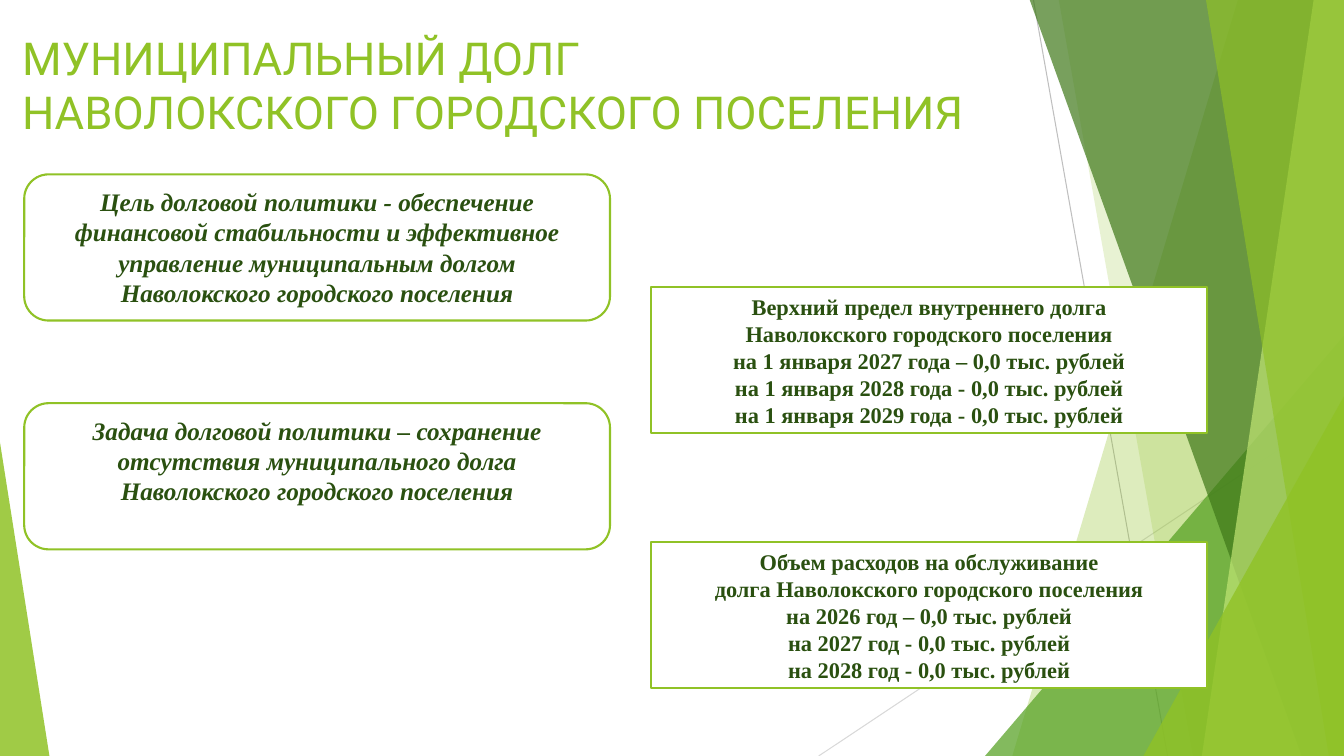
import pptx
import pptx.dml.color
import pptx.enum.shapes
import pptx.enum.text
import pptx.oxml.ns
import pptx.util
from lxml import etree
from pptx.util import Inches

RGBColor = pptx.dml.color.RGBColor
Shape = pptx.enum.shapes.MSO_SHAPE
Anchor = pptx.enum.text.MSO_ANCHOR
Align = pptx.enum.text.PP_ALIGN

LIME = RGBColor(0x90, 0xC2, 0x26)
PALE_LIME = RGBColor(0xC0, 0xE4, 0x74)
GREEN = RGBColor(0x54, 0xA0, 0x21)
FOREST = RGBColor(0x3F, 0x78, 0x19)
TEXT_GREEN = RGBColor(0x2A, 0x50, 0x10)
WHITE = RGBColor(0xFF, 0xFF, 0xFF)
GRAY = RGBColor(0xBF, 0xBF, 0xBF)
LIGHT_GRAY = RGBColor(0xD9, 0xD9, 0xD9)

WIDTH, HEIGHT = 13.33, 7.5
PANEL_TOP = -0.01

TITLE_FORMAT = {"name": "Roboto", "size": pptx.util.Pt(32.4)}
FIGURES_FORMAT = {"name": "Times New Roman", "size": pptx.util.Pt(16), "bold": True}
POLICY_FORMAT = {"name": "Times New Roman", "size": pptx.util.Pt(18),
                 "bold": True, "italic": True}

TITLE = "МУНИЦИПАЛЬНЫЙ ДОЛГ\vНАВОЛОКСКОГО ГОРОДСКОГО ПОСЕЛЕНИЯ"
GOAL = ["Цель долговой политики - обеспечение финансовой стабильности и эффективное "
        "управление муниципальным долгом Наволокского городского поселения"]
TASK = ["Задача долговой политики – сохранение отсутствия муниципального долга "
        "Наволокского городского поселения"]
DEBT_LIMIT = [
    "Верхний предел внутреннего долга",
    "Наволокского городского поселения",
    "на 1 января 2027 года – 0,0 тыс. рублей",
    "на 1 января 2028 года - 0,0 тыс. рублей",
    "на 1 января 2029 года - 0,0 тыс. рублей",
]
SERVICE_COSTS = [
    "Объем расходов на обслуживание",
    "долга Наволокского городского поселения",
    "на 2026 год – 0,0 тыс. рублей",
    "на 2027 год - 0,0 тыс. рублей",
    "на 2028 год - 0,0 тыс. рублей",
]


def add_line(slide, start, end, color):
    points = [Inches(value) for value in (*start, *end)]
    line = slide.shapes.add_connector(pptx.enum.shapes.MSO_CONNECTOR.STRAIGHT, *points)
    line.line.color.rgb = color
    line.line.width = pptx.util.Pt(0.75)
    etree.SubElement(line._element.spPr, pptx.oxml.ns.qn("a:effectLst"))


def fill_translucent(shape, color, opacity):
    """Fill without an outline; opacity is in percent."""
    shape.shadow.inherit = False
    shape.line.fill.background()
    shape.fill.solid()
    shape.fill.fore_color.rgb = color
    color_element = shape._element.spPr.find(
        f"{pptx.oxml.ns.qn('a:solidFill')}/{pptx.oxml.ns.qn('a:srgbClr')}")
    alpha = etree.SubElement(color_element, pptx.oxml.ns.qn("a:alpha"))
    alpha.set("val", str(opacity * 1000))


def add_panel(slide, top_x, bottom_x, color, opacity):
    """Full-height panel from a slanted left side to the right slide edge."""
    corners = [(WIDTH, PANEL_TOP), (WIDTH, HEIGHT), (bottom_x, HEIGHT)]
    builder = slide.shapes.build_freeform(Inches(top_x), Inches(PANEL_TOP))
    builder.add_line_segments([(Inches(x), Inches(y)) for x, y in corners])
    fill_translucent(builder.convert_to_shape(), color, opacity)


def add_corner(slide, left, top, width, apex, color, opacity):
    """Triangle standing on the bottom slide edge."""
    corner = slide.shapes.add_shape(
        Shape.ISOSCELES_TRIANGLE, Inches(left), Inches(top), Inches(width),
        Inches(HEIGHT - top))
    corner.adjustments[0] = apex
    fill_translucent(corner, color, opacity)


def write_text(shape, lines, text_format, color, alignment, anchor):
    frame = shape.text_frame
    frame.word_wrap = True
    frame.vertical_anchor = anchor
    for index, line in enumerate(lines):
        paragraph = frame.add_paragraph() if index else frame.paragraphs[0]
        paragraph.text = line
        paragraph.alignment = alignment
        for run in paragraph.runs:
            run.font.color.rgb = color
            for name, value in text_format.items():
                setattr(run.font, name, value)


def add_card(slide, kind, left, top, width, lines, text_format, anchor):
    card = slide.shapes.add_shape(
        kind, Inches(left), Inches(top), Inches(width), Inches(1.45))
    card.shadow.inherit = False
    card.fill.solid()
    card.fill.fore_color.rgb = WHITE
    card.line.color.rgb = LIME
    card.line.width = pptx.util.Pt(1.5)
    write_text(card, lines, text_format, TEXT_GREEN, Align.CENTER, anchor)


def add_decoration(slide):
    add_line(slide, (10.25, 0), (11.58, HEIGHT), GRAY)
    add_line(slide, (WIDTH, 4.03), (8.12, HEIGHT), LIGHT_GRAY)
    add_panel(slide, 12.28, 10.04, LIME, 30)
    add_panel(slide, 10.5, 11.83, LIME, 20)
    add_corner(slide, 9.77, 3.33, 3.56, 1, GREEN, 72)
    add_panel(slide, 10.21, 12.91, FOREST, 70)
    add_panel(slide, 13.03, 11.92, PALE_LIME, 70)
    add_panel(slide, 11.96, 13.18, LIME, 65)
    add_corner(slide, 11.34, 3.93, 1.99, 1, LIME, 80)
    add_corner(slide, 0, 4.39, 0.49, 0, LIME, 85)


def main():
    presentation = pptx.Presentation()
    presentation.slide_width = Inches(WIDTH)
    presentation.slide_height = Inches(HEIGHT)
    slide = presentation.slides.add_slide(presentation.slide_layouts[6])

    add_decoration(slide)
    title = slide.shapes.add_textbox(
        Inches(0.12), Inches(0.25), Inches(10.92), Inches(1.13))
    write_text(title, [TITLE], TITLE_FORMAT, LIME, Align.LEFT, Anchor.TOP)

    for top, lines in ((2.85, DEBT_LIMIT), (5.38, SERVICE_COSTS)):
        add_card(slide, Shape.RECTANGLE, 6.46, top, 5.51, lines,
                 FIGURES_FORMAT, Anchor.MIDDLE)
    for top, lines in ((1.73, GOAL), (4, TASK)):
        add_card(slide, Shape.ROUNDED_RECTANGLE, 0.24, top, 5.81, lines,
                 POLICY_FORMAT, Anchor.TOP)

    presentation.save("out.pptx")


if __name__ == "__main__":
    main()
